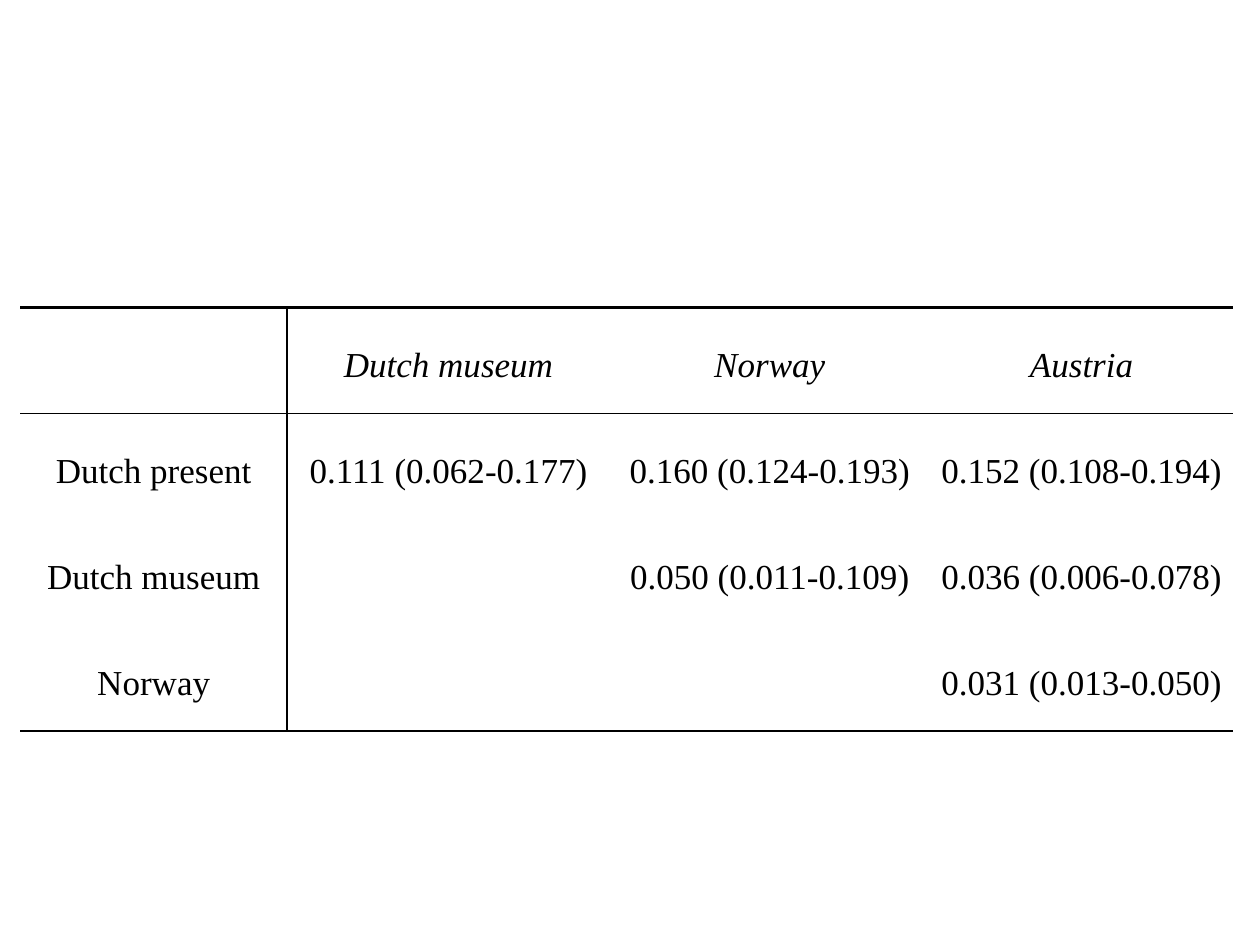
from dataclasses import dataclass

from lxml.etree import SubElement
from pptx import Presentation
from pptx.dml.color import RGBColor
from pptx.enum.text import MSO_ANCHOR, PP_ALIGN
from pptx.oxml.ns import qn
from pptx.table import _Cell
from pptx.util import Inches, Pt


@dataclass(frozen=True)
class Theme:
    font: str = "Times New Roman"
    ink: str = "000000"
    text_size: float = 20
    line_spacing: float = 2.0
    thin_rule: float = 1
    thick_rule: float = 1.5


@dataclass(frozen=True)
class Borders:
    left: float = 0
    right: float = 0
    top: float = 0
    bottom: float = 0


THEME = Theme()
COLUMN_WIDTHS = (2.12, 2.56, 2.54, 2.41)
ROW_HEIGHT = 0.84
ROWS = (
    ("", "Dutch museum", "Norway", "Austria"),
    ("Dutch present", "0.111 (0.062-0.177)", "0.160 (0.124-0.193)", "0.152 (0.108-0.194)"),
    ("Dutch museum", "", "0.050 (0.011-0.109)", "0.036 (0.006-0.078)"),
    ("Norway", "", "", "0.031 (0.013-0.050)"),
)


def borders_at(row: int, column: int) -> Borders:
    last_row = len(ROWS) - 1
    return Borders(
        left=THEME.thin_rule if column == 1 else 0,
        right=THEME.thin_rule if column == 0 else 0,
        top={0: THEME.thick_rule, 1: THEME.thin_rule}.get(row, 0),
        bottom={0: THEME.thin_rule, last_row: THEME.thick_rule}.get(row, 0),
    )


def draw_borders(cell: _Cell, borders: Borders) -> None:
    properties = cell._tc.get_or_add_tcPr()
    sides = {
        "a:lnL": borders.left,
        "a:lnR": borders.right,
        "a:lnT": borders.top,
        "a:lnB": borders.bottom,
    }
    for tag, width in sides.items():
        line = SubElement(properties, qn(tag), w=str(Pt(width)))
        if width:
            fill = SubElement(line, qn("a:solidFill"))
            SubElement(fill, qn("a:srgbClr"), val=THEME.ink)
        else:
            SubElement(line, qn("a:noFill"))


def write_cell(cell: _Cell, text: str, italic: bool) -> None:
    cell.margin_left = cell.margin_right = Inches(0.07)
    cell.margin_top = cell.margin_bottom = 0
    cell.vertical_anchor = MSO_ANCHOR.TOP
    cell.text_frame.text = text
    paragraph = cell.text_frame.paragraphs[0]
    paragraph.alignment = PP_ALIGN.CENTER
    paragraph.line_spacing = THEME.line_spacing
    for span in paragraph.runs:
        span.font.name = THEME.font
        span.font.size = Pt(THEME.text_size)
        span.font.italic = italic
        span.font.color.rgb = RGBColor.from_string(THEME.ink)


def main() -> None:
    deck = Presentation()
    deck.slide_width, deck.slide_height = Inches(10), Inches(7.5)
    page = deck.slides.add_slide(deck.slide_layouts[6])
    table = page.shapes.add_table(
        len(ROWS), len(COLUMN_WIDTHS), Inches(0.16), Inches(2.44),
        Inches(sum(COLUMN_WIDTHS)), Inches(ROW_HEIGHT * len(ROWS)),
    ).table
    table.first_row = table.horz_banding = False
    for column, width in zip(table.columns, COLUMN_WIDTHS):
        column.width = Inches(width)
    for row_index, texts in enumerate(ROWS):
        table.rows[row_index].height = Inches(ROW_HEIGHT)
        for column_index, text in enumerate(texts):
            cell = table.cell(row_index, column_index)
            write_cell(cell, text, italic=row_index == 0)
            draw_borders(cell, borders_at(row_index, column_index))
            cell.fill.background()
    deck.save("out.pptx")


if __name__ == "__main__":
    main()
